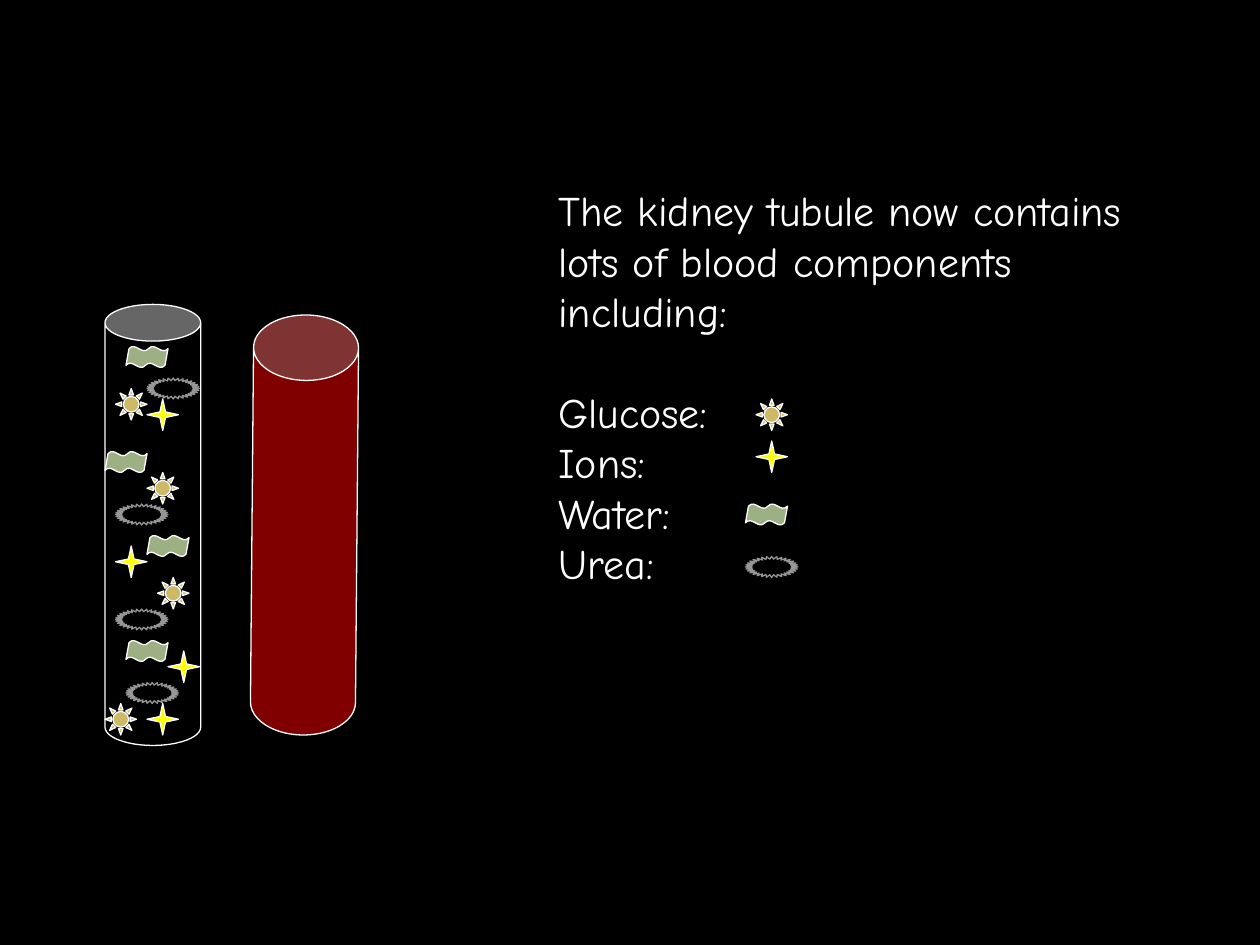
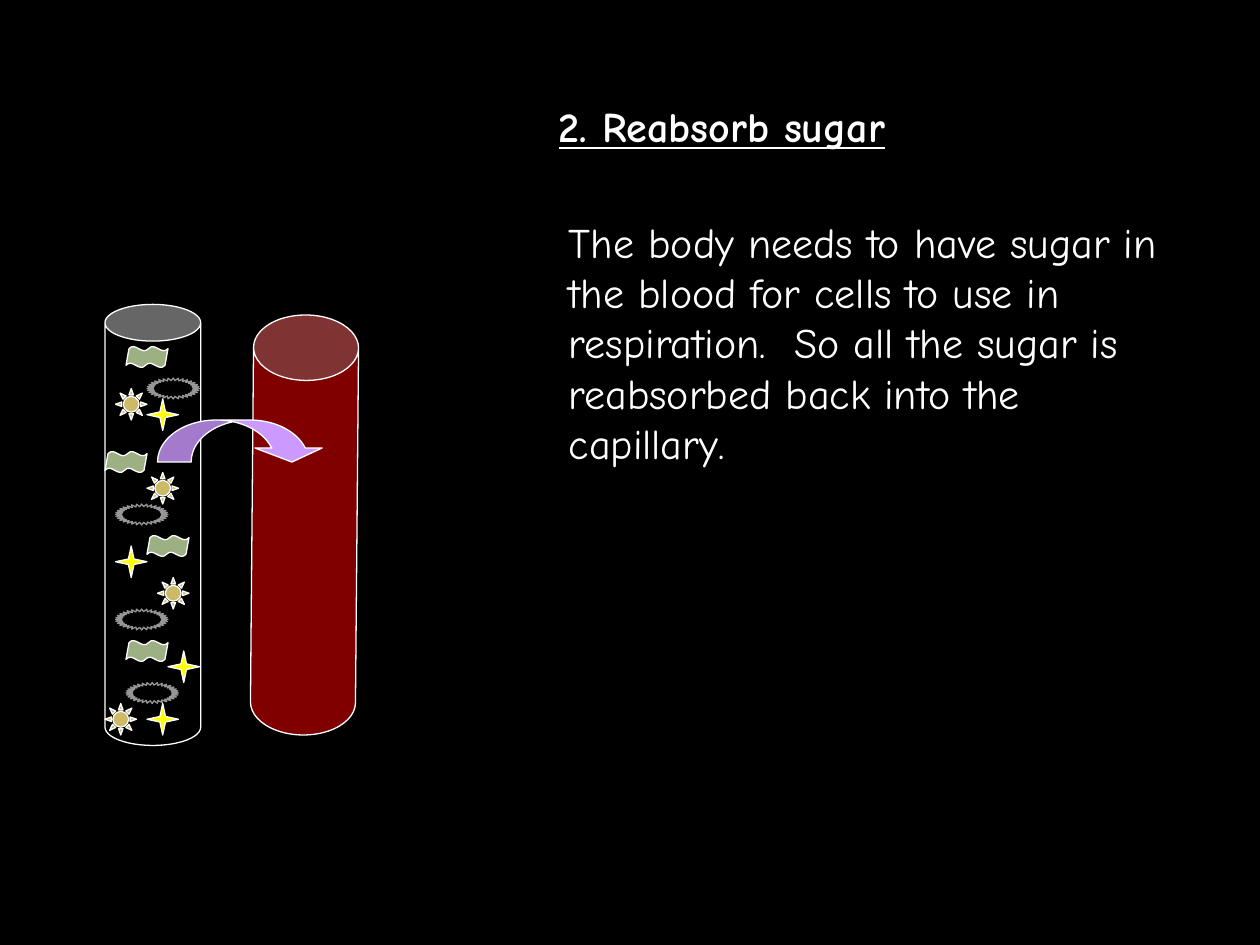
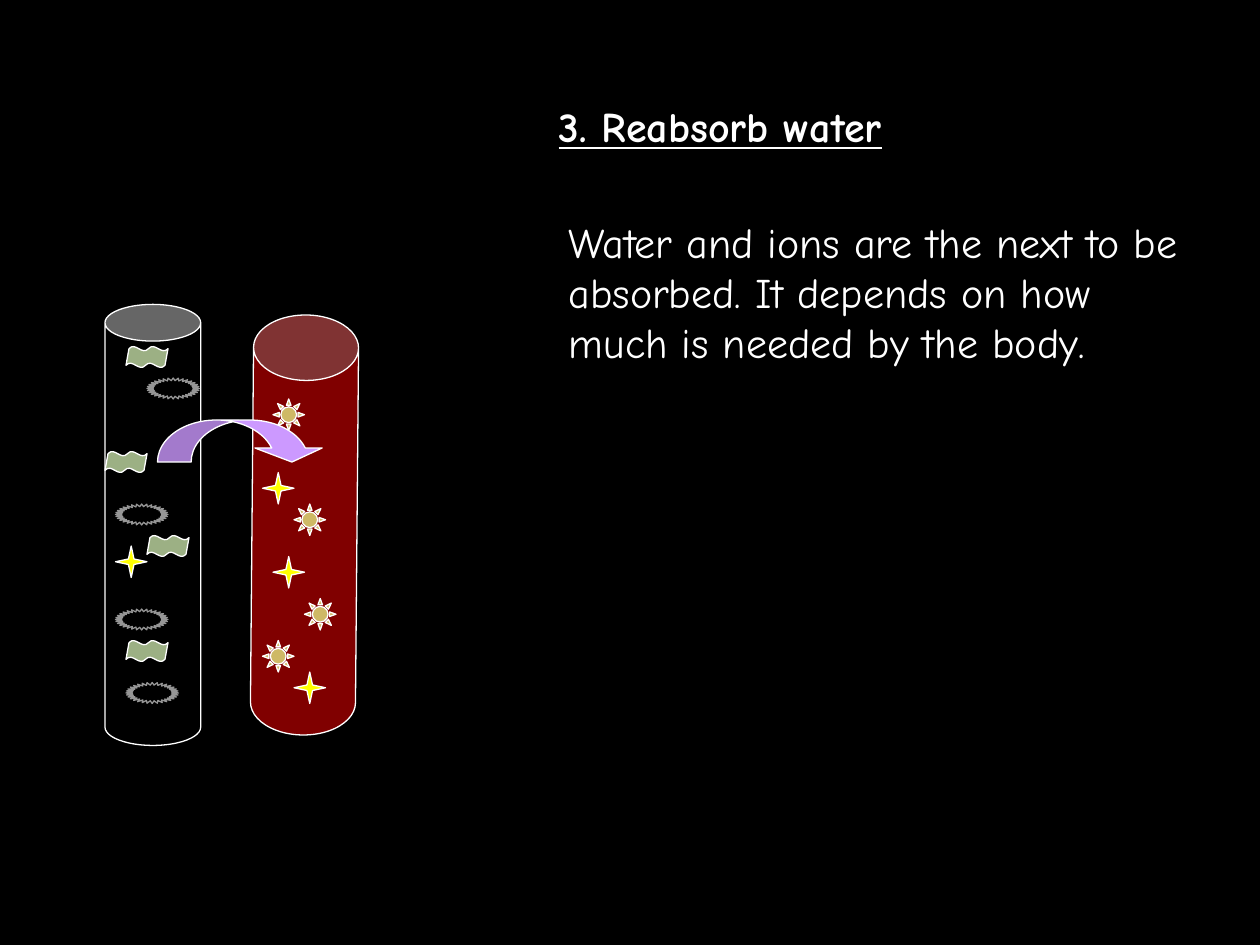
from collections import namedtuple

from lxml.etree import SubElement
from pptx import Presentation
from pptx.dml.color import RGBColor
from pptx.enum.shapes import MSO_SHAPE as Preset
from pptx.enum.text import MSO_ANCHOR as Anchor, MSO_AUTO_SIZE as AutoSize, PP_ALIGN as Align
from pptx.oxml.ns import qn
from pptx.util import Cm, Pt

COLORS = {
    "background": "000000",
    "text": "FFFFFF",
    "outline": "FFFFFF",
    "tubule": "000000",
    "capillary": "FF0000",
    "glucose": "CEB966",
    "ions": "FFFF00",
    "water": "9CB084",
    "urea": "000000",
    "urea outline": "969696",
    "arrow": "CC99FF",
}
FONT = "Comic Neue"
FONT_SIZE = Pt(24)
CELLS_PER_INCH = 12

Box = namedtuple("Box", "left top width height")
Particle = namedtuple("Particle", "preset width height adjustments outline")

PARTICLES = {
    "glucose": Particle(Preset.SUN, 3, 3, [0.25], "outline"),
    "ions": Particle(Preset.STAR_4_POINT, 3, 3, [0.125], "outline"),
    "water": Particle(Preset.DOUBLE_WAVE, 4, 2, [0.103, -0.036], "outline"),
    "urea": Particle(Preset.STAR_32_POINT, 5, 2, [0.375], "urea outline"),
}

TUBULE = Box(10, 29, 9.12, 42)
CAPILLARY = Box(24, 30, 10, 40)
ARROW = Box(15, 40, 16, 4)
TITLE = Box(52, 9, 61, 6)
BODY = Box(53, 20, 61, 25)
LEGEND = Box(52, 17, 61, 39.6)

FILTERED = {
    "water": [(2, 32), (0, 14), (4, 22), (2, 4)],
    "glucose": [(1, 8), (4, 16), (0, 38), (5, 26)],
    "urea": [(1, 29), (2, 36), (1, 19), (4, 7)],
    "ions": [(1, 23), (4, 9), (4, 38), (6, 33)],
}
REMAINING = {**FILTERED, "glucose": [], "ions": [(1, 23)]}
REABSORBED = {
    "glucose": [(2, 8), (4, 18), (1, 31), (5, 27)],
    "ions": [(1, 15), (2, 23), (4, 34)],
}
LEGEND_KEYS = {
    "glucose": [(20, 21)],
    "ions": [(20, 25)],
    "water": [(19, 31)],
    "urea": [(19, 36)],
}


def color(name):
    return RGBColor.from_string(COLORS[name])


def place(box):
    return [Cm(cells * 2.54 / CELLS_PER_INCH) for cells in box]


def add_figure(slide, preset, box, fill, adjustments, outline="outline"):
    shape = slide.shapes.add_shape(preset, *place(box))
    shape.shadow.inherit = False
    shape.fill.solid()
    shape.fill.fore_color.rgb = color(fill)
    shape.line.color.rgb = color(outline)
    shape.line.width = Pt(0.75)
    for index, value in enumerate(adjustments):
        shape.adjustments[index] = value
    return shape


def add_particles(slide, box, positions):
    for name, offsets in positions.items():
        particle = PARTICLES[name]
        for left, top in offsets:
            particle_box = Box(box.left + left, box.top + top, particle.width, particle.height)
            add_figure(slide, particle.preset, particle_box, name,
                       particle.adjustments, particle.outline)


def add_tubule(slide, box, contents):
    add_figure(slide, Preset.CAN, box, "tubule", [0.383])
    add_particles(slide, box, contents)


def add_capillary(slide, box, contents):
    shape = add_figure(slide, Preset.CAN, box, "capillary", [0.623])
    shape.rotation = 0.5
    fill_color = shape.fill._xPr.find(qn("a:solidFill"))[0]
    SubElement(fill_color, qn("a:alpha")).set("val", "50000")
    add_particles(slide, box, contents)


def add_arrow(slide, box):
    add_figure(slide, Preset.CURVED_DOWN_ARROW, box, "arrow", [0.8, 1.6, 0.333])


def write_text(shape, lines, bold=False):
    frame = shape.text_frame
    frame.word_wrap = True
    frame.auto_size = AutoSize.NONE
    frame.vertical_anchor = Anchor.TOP
    frame.text = "\n".join(lines)
    for paragraph in frame.paragraphs:
        paragraph.alignment = Align.LEFT
        font = paragraph.font
        font.name = FONT
        font.size = FONT_SIZE
        font.color.rgb = color("text")
        font.bold = bold
        font.underline = bold
    return frame


def add_title(slide, box, title):
    shape = slide.shapes.title
    shape.left, shape.top, shape.width, shape.height = place(box)
    write_text(shape, [title], bold=True)


def add_body(slide, box, lines):
    return write_text(slide.shapes.add_textbox(*place(box)), lines)


def add_legend(slide, box):
    intro = "The kidney tubule now contains lots of blood components including:"
    labels = [f"{name.capitalize()}:" for name in LEGEND_KEYS]
    frame = add_body(slide, box, [intro, *labels])
    frame.paragraphs[1].space_before = Pt(29)
    add_particles(slide, box, LEGEND_KEYS)


def build_contents_slide(presentation):
    slide = presentation.slides.add_slide(presentation.slide_layouts.get_by_name("Blank"))
    add_legend(slide, LEGEND)
    add_tubule(slide, TUBULE, FILTERED)
    add_capillary(slide, CAPILLARY, {})


def build_reabsorption_slide(presentation, title, body, in_tubule, in_capillary):
    slide = presentation.slides.add_slide(presentation.slide_layouts.get_by_name("Title Only"))
    add_title(slide, TITLE, title)
    add_body(slide, BODY, [body])
    add_tubule(slide, TUBULE, in_tubule)
    add_capillary(slide, CAPILLARY, in_capillary)
    add_arrow(slide, ARROW)


def main():
    presentation = Presentation()
    presentation.slide_width = Cm(25.4)
    presentation.slide_height = Cm(19.05)
    background = presentation.slide_master.background.fill
    background.solid()
    background.fore_color.rgb = color("background")

    build_contents_slide(presentation)
    build_reabsorption_slide(
        presentation,
        "2. Reabsorb sugar",
        "The body needs to have sugar in the blood for cells to use in respiration.  "
        "So all the sugar is reabsorbed back into the capillary.",
        FILTERED,
        {},
    )
    build_reabsorption_slide(
        presentation,
        "3. Reabsorb water",
        "Water and ions are the next to be absorbed. "
        "It depends on how much is needed by the body.",
        REMAINING,
        REABSORBED,
    )
    presentation.save("out.pptx")


if __name__ == "__main__":
    main()
